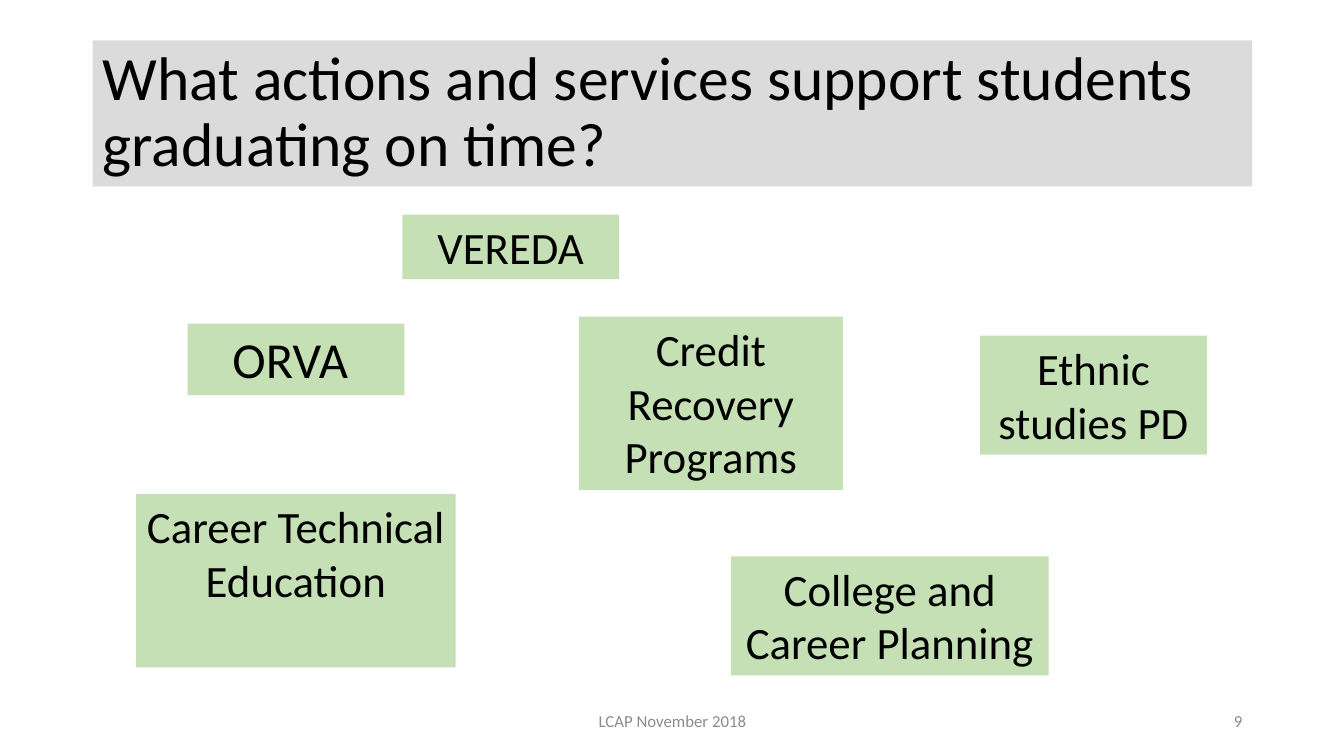
from pptx import Presentation
from pptx.dml.color import RGBColor
from pptx.enum.text import MSO_ANCHOR, PP_ALIGN
from pptx.util import Inches, Pt


def color(value):
    return RGBColor.from_string(value)


class SlideBuilder:
    """Draws styled text blocks on one slide."""

    font = "Calibri"
    ink, muted = "000000", "8C8C8C"
    banner, green = "DBDBDB", "C5E0B4"

    def __init__(self, slide):
        self.slide = slide

    def text(self, text, box, size, ink, align, anchor, fill=None):
        sp = self.slide.shapes.add_textbox(*map(Inches, box))
        if fill:
            sp.fill.solid()
            sp.fill.fore_color.rgb = color(fill)
        tf = sp.text_frame
        tf.word_wrap = True
        tf.vertical_anchor = anchor
        p = tf.paragraphs[0]
        p.text = text
        p.alignment = align
        p.font.name = self.font
        p.font.size = Pt(size)
        p.font.color.rgb = color(ink)
        return p

    def title(self, text, box):
        p = self.text(text, box, 44, self.ink, PP_ALIGN.LEFT,
                      MSO_ANCHOR.MIDDLE, self.banner)
        p.line_spacing = 0.9

    def card(self, text, box, size=32):
        self.text(text, box, size, self.ink, PP_ALIGN.CENTER,
                  MSO_ANCHOR.TOP, self.green)

    def footer(self, text, left, width, align):
        self.text(text, (left, 6.95, width, 0.4), 12, self.muted, align,
                  MSO_ANCHOR.MIDDLE)


def main():
    prs = Presentation()
    prs.slide_width, prs.slide_height = Inches(13.33), Inches(7.5)
    s = SlideBuilder(prs.slides.add_slide(prs.slide_layouts[6]))

    s.title("What actions and services support students graduating on time?",
            (0.92, 0.4, 11.5, 1.45))
    s.footer("LCAP November 2018", 4.42, 4.5, PP_ALIGN.CENTER)
    s.footer("9", 9.42, 3, PP_ALIGN.RIGHT)

    s.card("ORVA ", (1.86, 3.21, 2.15, 0.71), size=36)
    s.card("VEREDA", (3.99, 2.13, 2.15, 0.64))
    s.card("Career Technical Education", (1.35, 4.9, 3.17, 1.72))
    s.card("Credit Recovery Programs", (5.74, 3.14, 2.62, 1.72))
    s.card("College and Career Planning", (7.25, 5.52, 3.15, 1.18))
    s.card("Ethnic studies PD", (9.72, 3.33, 2.25, 1.18))

    prs.save("out.pptx")


if __name__ == "__main__":
    main()
